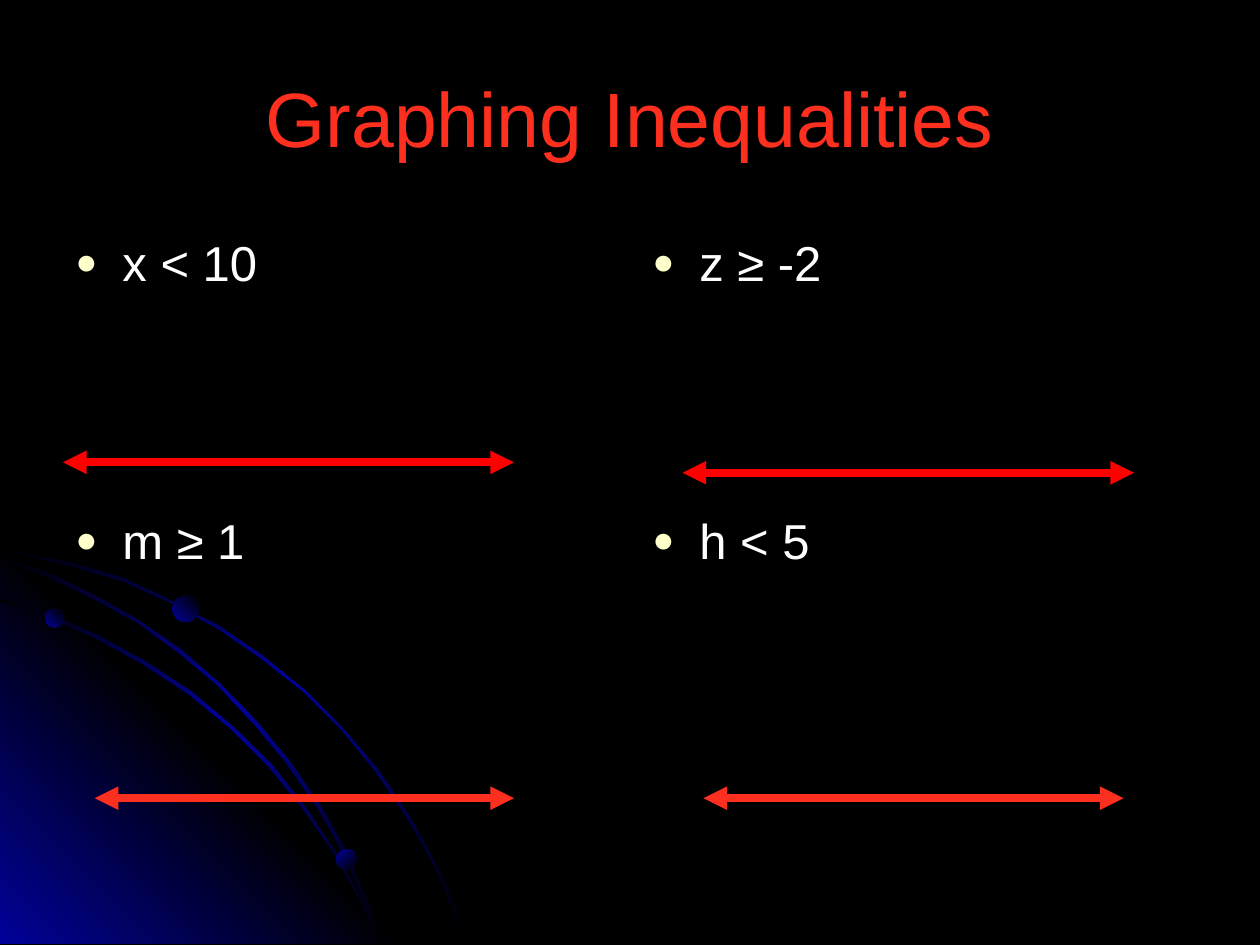
from lxml import etree
from pptx import Presentation
from pptx.dml.color import RGBColor
from pptx.enum.shapes import MSO_CONNECTOR, MSO_SHAPE
from pptx.enum.text import MSO_ANCHOR, PP_ALIGN
from pptx.oxml import parse_xml
from pptx.oxml.ns import qn
from pptx.util import Cm, Pt

STRAIGHT = MSO_CONNECTOR.STRAIGHT
OVAL = MSO_SHAPE.OVAL
MIDDLE = MSO_ANCHOR.MIDDLE
CENTER = PP_ALIGN.CENTER
DRAWING_NS = "http://schemas.openxmlformats.org/drawingml/2006/main"
COLORS = {
    "black": "000000",
    "blue": "010199",
    "title": "FD2F1F",
    "red": "FF0000",
    "white": "FFFFFF",
    "bullet": "FFFFCC",
}


def paint_gradient(shape, names, angle):
    shape.shadow.inherit = False
    shape.line.fill.background()
    step = 100000 // (len(names) - 1)
    stops = "".join(
        f'<a:gs pos="{i * step}"><a:srgbClr val="{COLORS[name]}"/></a:gs>'
        for i, name in enumerate(names)
    )
    gradient = parse_xml(
        f'<a:gradFill xmlns:a="{DRAWING_NS}" rotWithShape="1"><a:gsLst>{stops}</a:gsLst>'
        f'<a:lin ang="{angle * 60000}" scaled="0"/></a:gradFill>'
    )
    shape.element.spPr.find(qn("a:ln")).addprevious(gradient)


def write_run(paragraph, text, size, color):
    run = paragraph.add_run()
    run.text = text
    run.font.name = "Arial"
    run.font.size = Pt(size)
    run.font.color.rgb = RGBColor.from_string(COLORS[color])


prs = Presentation()
prs.slide_width = Cm(25.4)
prs.slide_height = Cm(19.05)
slide = prs.slides.add_slide(prs.slide_layouts[6])
shapes = slide.shapes
slide.background.fill.solid()
slide.background.fill.fore_color.rgb = RGBColor.from_string(COLORS["black"])

outer_arc = [
    (57, 447), (28, 441), (0, 435), (0, 438), (28, 443), (56, 449), (97, 461),
    (135, 478), (173, 499), (208, 523), (241, 549), (271, 579), (298, 612),
    (323, 649), (337, 673), (350, 698), (360, 723), (370, 749), (372, 749),
    (362, 723), (352, 698), (339, 673), (325, 648), (300, 611), (272, 578),
    (242, 548), (209, 521), (174, 497), (136, 477), (98, 459),
]
corner_glow = [(322, 749), (0, 749), (0, 427)]
inner_arc = [
    (285, 714), (294, 732), (301, 749), (303, 749), (296, 730), (286, 712),
    (266, 676), (242, 640), (215, 606), (184, 576), (152, 549), (117, 526),
    (79, 505), (41, 488), (0, 475), (0, 477), (39, 490), (77, 507), (115, 528),
    (150, 551), (183, 578), (213, 608), (240, 641), (265, 677),
]
middle_arc = [
    (0, 442), (0, 444), (36, 457), (74, 475), (109, 494), (142, 518), (173, 544),
    (202, 575), (227, 605), (252, 641), (267, 667), (280, 694), (292, 722),
    (301, 749), (303, 749), (294, 720), (282, 693), (269, 665), (254, 639),
    (229, 603), (204, 573), (175, 543), (144, 516), (111, 493), (76, 473), (39, 455),
]
arc_fade = ("black", "blue", "black")
glow_fade = ("blue", "black", "blue")
for outline, fade, angle in [
    (outer_arc, arc_fade, 45),
    (corner_glow, glow_fade, 315),
    (inner_arc, arc_fade, 45),
    (middle_arc, arc_fade, 45),
]:
    builder = shapes.build_freeform(*outline[0], scale=Cm(0.0254))
    builder.add_line_segments(outline[1:], close=True)
    paint_gradient(builder.convert_to_shape(), fade, angle)

for left, top, diameter, angle in [
    (0.91, 12.27, 0.38, 315),
    (6.78, 17.12, 0.41, 45),
    (3.48, 12.01, 0.53, 315),
]:
    planet = shapes.add_shape(OVAL, Cm(left), Cm(top), Cm(diameter), Cm(diameter))
    paint_gradient(planet, ("blue", "black"), angle)

heading = shapes.add_textbox(Cm(1.27), Cm(0.76), Cm(22.86), Cm(3.18)).text_frame
heading.word_wrap = True
heading.vertical_anchor = MIDDLE
heading.paragraphs[0].alignment = CENTER
write_run(heading.paragraphs[0], "Graphing Inequalities", 44, "title")

for left, inequalities in [(1.27, ("x < 10", "m ≥ 1")), (12.9, ("z ≥ -2", "h < 5"))]:
    column = shapes.add_textbox(Cm(left), Cm(4.45), Cm(11.23), Cm(12.57)).text_frame
    column.word_wrap = True
    column.margin_top = Cm(0.24)
    for i, inequality in enumerate(inequalities):
        paragraph = column.add_paragraph() if i else column.paragraphs[0]
        paragraph.space_before = Pt(125 * i)
        props = paragraph._p.get_or_add_pPr()
        props.set("marL", str(Cm(0.95)))
        props.set("indent", str(-Cm(0.95)))
        bullet_color = etree.SubElement(props, qn("a:buClr"))
        etree.SubElement(bullet_color, qn("a:srgbClr"), val=COLORS["bullet"])
        etree.SubElement(props, qn("a:buSzPct"), val="75000")
        etree.SubElement(props, qn("a:buFont"), typeface="Arial")
        etree.SubElement(props, qn("a:buChar"), char="●")
        write_run(paragraph, inequality, 28, "white")

for start, end, height, color in [
    (1.27, 10.36, 9.32, "red"),
    (13.76, 22.86, 9.53, "red"),
    (1.91, 10.36, 16.09, "title"),
    (14.18, 22.65, 16.09, "title"),
]:
    number_line = shapes.add_connector(STRAIGHT, Cm(start), Cm(height), Cm(end), Cm(height))
    number_line.line.color.rgb = RGBColor.from_string(COLORS[color])
    number_line.line.width = Pt(4.5)
    stroke = number_line.line._get_or_add_ln()
    for tip in ("a:headEnd", "a:tailEnd"):
        etree.SubElement(stroke, qn(tip), type="triangle")
    etree.SubElement(number_line._element.spPr, qn("a:effectLst"))

prs.save("out.pptx")
